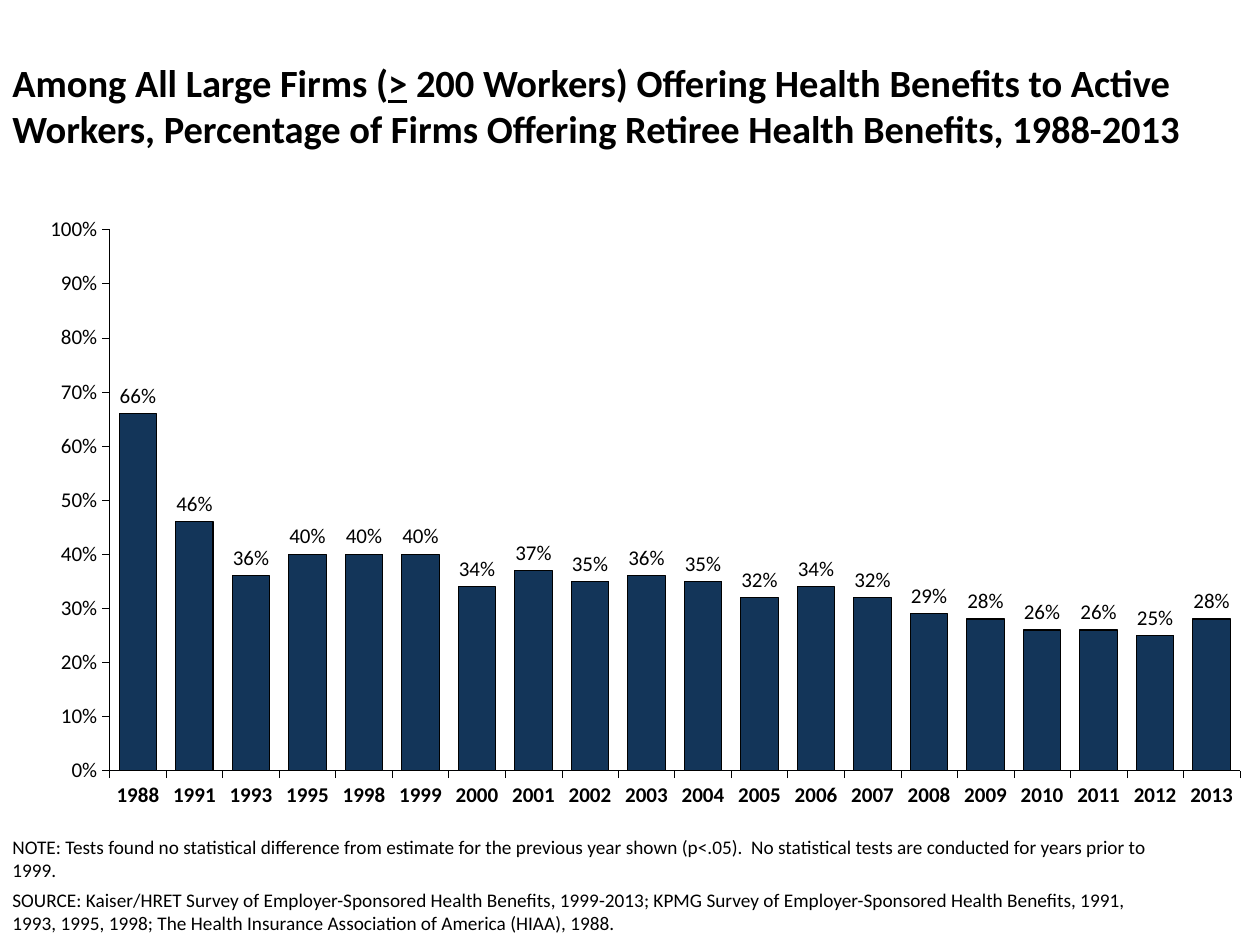
import dataclasses

import pptx
import pptx.chart.data
import pptx.dml.color
import pptx.enum.chart
import pptx.enum.text
import pptx.oxml
import pptx.oxml.ns
import pptx.util
from pptx.util import Cm


@dataclasses.dataclass(frozen=True)
class Theme:
    font: str = "Calibri"
    ink: pptx.dml.color.RGBColor = pptx.dml.color.RGBColor(0, 0, 0)
    bar: pptx.dml.color.RGBColor = pptx.dml.color.RGBColor(0x13, 0x35, 0x59)
    title_size: int = 22
    chart_size: int = 12
    note_size: int = 11
    axis_line: float = 0.23
    bar_line: float = 0.75


THEME = Theme()

TITLE = [
    ("Among All Large Firms (", False),
    (">", True),
    (" 200 Workers) Offering Health Benefits to Active Workers, "
     "Percentage of Firms Offering Retiree Health Benefits, 1988-2013", False),
]
NOTES = [
    "NOTE: Tests found no statistical difference from estimate for the previous "
    "year shown (p<.05).  No statistical tests are conducted for years prior to 1999.",
    "SOURCE: Kaiser/HRET Survey of Employer-Sponsored Health Benefits, 1999-2013; "
    "KPMG Survey of Employer-Sponsored Health Benefits, 1991, 1993, 1995, 1998; "
    "The Health Insurance Association of America (HIAA), 1988.",
]
YEARS = [1988, 1991, 1993, 1995, 1998, *range(1999, 2014)]
PERCENTAGES = [66, 46, 36, 40, 40, 40, 34, 37, 35, 36,
               35, 32, 34, 32, 29, 28, 26, 26, 25, 28]


def style_font(font, size, bold=False):
    font.name = THEME.font
    font.size = pptx.util.Pt(size)
    font.bold = bold
    font.color.rgb = THEME.ink


def style_line(line, width):
    line.color.rgb = THEME.ink
    line.width = pptx.util.Pt(width)


def add_text(page, left, top, width, height):
    frame = page.shapes.add_textbox(left, top, width, height).text_frame
    frame.word_wrap = True
    frame.vertical_anchor = pptx.enum.text.MSO_ANCHOR.TOP
    return frame


def add_span(para, text, size, bold=False, underline=False):
    span = para.add_run()
    span.text = text
    style_font(span.font, size, bold)
    if underline:
        span.font.underline = True


def add_title(page):
    frame = add_text(page, Cm(0), Cm(1.07), Cm(25.4), Cm(2.97))
    for text, underline in TITLE:
        add_span(frame.paragraphs[0], text, THEME.title_size, True, underline)


def add_notes(page):
    frame = add_text(page, Cm(0), Cm(16.71), Cm(23.5), Cm(2.29))
    for index, text in enumerate(NOTES):
        para = frame.add_paragraph() if index else frame.paragraphs[0]
        if index:
            para.space_before = pptx.util.Pt(4)
        add_span(para, text, THEME.note_size)


def style_axis(axis, bold=False):
    axis.has_major_gridlines = False
    axis.major_tick_mark = pptx.enum.chart.XL_TICK_MARK.OUTSIDE
    style_font(axis.tick_labels.font, THEME.chart_size, bold)
    style_line(axis.format.line, THEME.axis_line)


def place_plot(chart, left, top, width, height):
    """Fix the inner plot area, as fractions of the chart frame."""
    area = chart.plots[0]._element.getparent()
    for old in area.findall(pptx.oxml.ns.qn("c:layout")):
        area.remove(old)
    area.insert(0, pptx.oxml.parse_xml(
        f'<c:layout {pptx.oxml.ns.nsdecls("c")}><c:manualLayout>'
        '<c:layoutTarget val="inner"/><c:xMode val="edge"/><c:yMode val="edge"/>'
        f'<c:x val="{left}"/><c:y val="{top}"/><c:w val="{width}"/><c:h val="{height}"/>'
        '</c:manualLayout></c:layout>'))


def add_bar_chart(page):
    data = pptx.chart.data.CategoryChartData(number_format="0%")
    data.categories = [str(year) for year in YEARS]
    data.add_series("Series 1", [value / 100 for value in PERCENTAGES])
    chart = page.shapes.add_chart(
        pptx.enum.chart.XL_CHART_TYPE.COLUMN_CLUSTERED,
        Cm(-0.1), Cm(4.01), Cm(25.4), Cm(12.37), data).chart
    chart.has_legend = False
    chart.has_title = False
    style_font(chart.font, THEME.chart_size)
    place_plot(chart, 0.091, 0.05, 0.897, 0.882)

    # Axes
    style_axis(chart.category_axis, bold=True)
    scale = chart.value_axis
    style_axis(scale)
    scale.minimum_scale, scale.maximum_scale, scale.major_unit = 0, 1, 0.1
    scale.tick_labels.number_format = "0%"
    scale.tick_labels.number_format_is_linked = False

    # Bars
    plot = chart.plots[0]
    plot.gap_width, plot.overlap = 51, 1
    plot.vary_by_categories = False
    bars = plot.series[0]
    bars.format.fill.solid()
    bars.format.fill.fore_color.rgb = THEME.bar
    style_line(bars.format.line, THEME.bar_line)

    # Value labels
    labels = bars.data_labels
    labels.show_value = True
    labels.number_format = "0%"
    labels.number_format_is_linked = False
    labels.position = pptx.enum.chart.XL_LABEL_POSITION.OUTSIDE_END
    style_font(labels.font, THEME.chart_size)


def main():
    deck = pptx.Presentation()
    deck.slide_width, deck.slide_height = Cm(25.4), Cm(19.05)
    page = deck.slides.add_slide(deck.slide_layouts[6])
    add_bar_chart(page)
    add_title(page)
    add_notes(page)
    deck.save("out.pptx")


if __name__ == "__main__":
    main()
